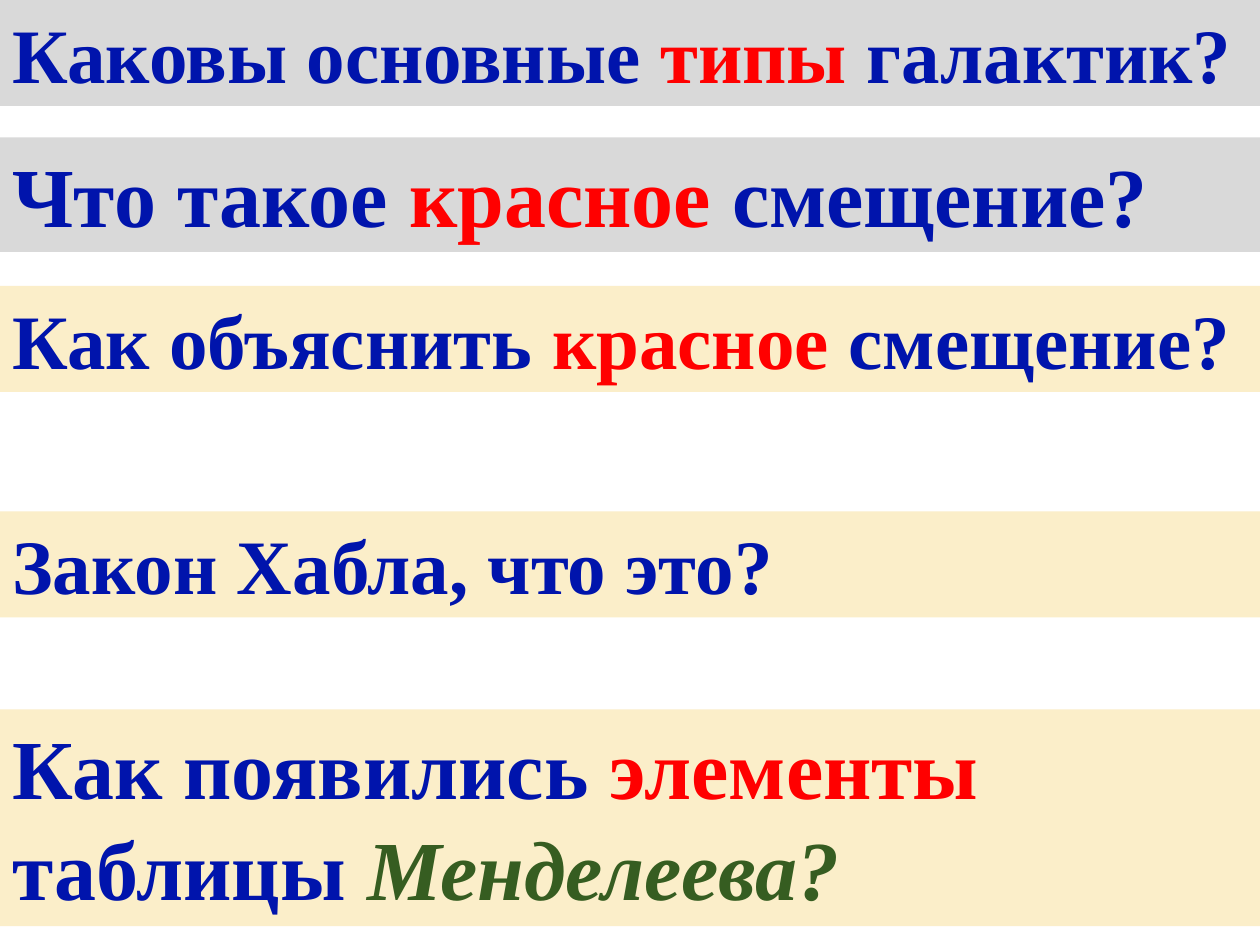
"""Builds a slide of review questions about galaxies on full-width bands."""
from dataclasses import dataclass
from typing import NamedTuple

from pptx import Presentation
from pptx import util as u
from pptx.dml import color
from pptx.enum import text


@dataclass(frozen=True)
class Theme:
    font: str = "Times New Roman"
    ink: str = "0014AC"
    accent: str = "FF0000"
    scholar: str = "365D21"
    grey: str = "D9D9D9"
    cream: str = "FBEEC9"
    medium: int = 44
    large: int = 48


class Phrase(NamedTuple):
    wording: str
    color: str
    italic: bool = False


class Band(NamedTuple):
    top: float
    height: float
    fill: str
    size: int
    phrases: tuple[Phrase, ...]


THEME = Theme()
WIDTH, HEIGHT = u.Inches(10), u.Inches(7.5)
ROW = HEIGHT / 750

BANDS = (
    Band(0, 84, THEME.grey, THEME.medium, (
        Phrase("Каковы основные ", THEME.ink),
        Phrase("типы", THEME.accent),
        Phrase(" галактик?", THEME.ink),
    )),
    Band(109, 91, THEME.grey, THEME.large, (
        Phrase("Что такое ", THEME.ink),
        Phrase("красное", THEME.accent),
        Phrase(" смещение?", THEME.ink),
    )),
    Band(227, 84, THEME.cream, THEME.medium, (
        Phrase("Как объяснить ", THEME.ink),
        Phrase("красное", THEME.accent),
        Phrase(" смещение?", THEME.ink),
    )),
    Band(406, 84, THEME.cream, THEME.medium, (
        Phrase("Закон Хабла, что это?", THEME.ink),
    )),
    Band(563, 172, THEME.cream, THEME.large, (
        Phrase("Как появились ", THEME.ink),
        Phrase("элементы", THEME.accent),
        Phrase(" таблицы ", THEME.ink),
        Phrase("Менделеева?", THEME.scholar, italic=True),
    )),
)


def draw_band(slide, band: Band) -> None:
    shape = slide.shapes.add_textbox(0, round(band.top * ROW), WIDTH, round(band.height * ROW))
    shape.fill.solid()
    shape.fill.fore_color.rgb = color.RGBColor.from_string(band.fill)
    frame = shape.text_frame
    frame.word_wrap = True
    frame.auto_size = text.MSO_AUTO_SIZE.SHAPE_TO_FIT_TEXT
    paragraph = frame.paragraphs[0]
    paragraph.font.name = THEME.font
    paragraph.font.size = u.Pt(band.size)
    paragraph.font.bold = True
    for phrase in band.phrases:
        run = paragraph.add_run()
        run.text = phrase.wording
        run.font.color.rgb = color.RGBColor.from_string(phrase.color)
        if phrase.italic:
            run.font.italic = True


def main() -> None:
    presentation = Presentation()
    presentation.slide_width, presentation.slide_height = WIDTH, HEIGHT
    slide = presentation.slides.add_slide(presentation.slide_layouts[6])
    for band in BANDS:
        draw_band(slide, band)
    presentation.save("out.pptx")


if __name__ == "__main__":
    main()
